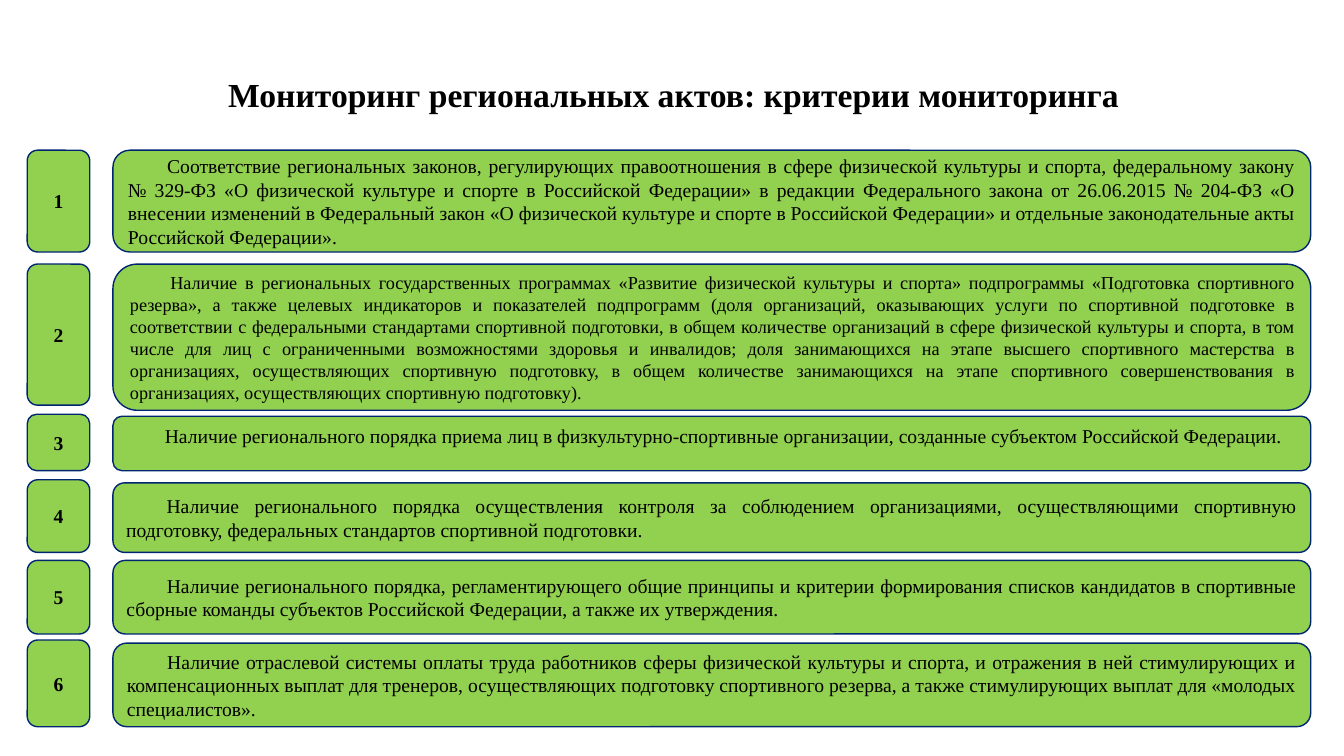
from dataclasses import dataclass

from pptx import Presentation
from pptx.dml.color import RGBColor
from pptx.enum.shapes import MSO_SHAPE
from pptx.enum.text import MSO_ANCHOR, MSO_AUTO_SIZE, PP_ALIGN
from pptx.util import Inches, Pt

COLORS = {"fill": "92D050", "line": "002671", "text": "000000"}
FONT = "Times New Roman"
NUM_X, NUM_W = 0.27, 0.62
TEXT_X, TEXT_W = 1.12, 11.88


@dataclass
class Criterion:
    num_top: float
    num_h: float
    top: float
    height: float
    text: str
    size: int = 14
    indent: float = 0.4
    anchor: MSO_ANCHOR = MSO_ANCHOR.MIDDLE


CRITERIA = [
    Criterion(1.49, 1.01, 1.49, 1.01,
              "Соответствие региональных законов, регулирующих правоотношения в сфере физической "
              "культуры и спорта, федеральному закону № 329-ФЗ «О физической культуре и спорте в "
              "Российской Федерации» в редакции Федерального закона от 26.06.2015 № 204-ФЗ «О "
              "внесении изменений в Федеральный закон «О физической культуре и спорте в Российской "
              "Федерации» и отдельные законодательные акты Российской Федерации».", indent=0.39),
    Criterion(2.62, 1.4, 2.62, 1.45,
              "Наличие в региональных государственных программах «Развитие физической культуры и "
              "спорта» подпрограммы «Подготовка спортивного резерва», а также целевых индикаторов и "
              "показателей подпрограмм (доля организаций, оказывающих услуги по спортивной "
              "подготовке в соответствии с федеральными стандартами спортивной подготовки, в общем "
              "количестве организаций в сфере физической культуры и спорта, в том числе для лиц с "
              "ограниченными возможностями здоровья и инвалидов; доля занимающихся на этапе высшего "
              "спортивного мастерства в организациях, осуществляющих спортивную подготовку, в общем "
              "количестве занимающихся на этапе спортивного совершенствования в организациях, "
              "осуществляющих спортивную подготовку).", size=13),
    Criterion(4.11, 0.56, 4.13, 0.54,
              "Наличие регионального порядка приема лиц в физкультурно-спортивные организации, "
              "созданные субъектом Российской Федерации.", indent=0.39, anchor=MSO_ANCHOR.TOP),
    Criterion(4.76, 0.72, 4.79, 0.69,
              "Наличие регионального порядка осуществления контроля за соблюдением организациями, "
              "осуществляющими спортивную подготовку, федеральных стандартов спортивной подготовки."),
    Criterion(5.56, 0.73, 5.56, 0.73,
              "Наличие регионального порядка, регламентирующего общие принципы и критерии "
              "формирования списков кандидатов в спортивные сборные команды субъектов Российской "
              "Федерации, а также их утверждения."),
    Criterion(6.35, 0.86, 6.38, 0.83,
              "Наличие отраслевой системы оплаты труда работников сферы физической культуры и "
              "спорта, и отражения в ней стимулирующих и компенсационных выплат для тренеров, "
              "осуществляющих подготовку спортивного резерва, а также стимулирующих выплат для "
              "«молодых специалистов»."),
]


def set_attrs(obj, values: dict) -> None:
    """Set every attribute named in values."""
    for name, value in values.items():
        setattr(obj, name, value)


def write(sp, text: str, size: int, bold: bool, align: PP_ALIGN,
          anchor: MSO_ANCHOR = MSO_ANCHOR.MIDDLE, indent: float = 0):
    """Write one formatted paragraph into a shape and return it."""
    tf = sp.text_frame
    set_attrs(tf, {"word_wrap": True, "auto_size": MSO_AUTO_SIZE.NONE, "vertical_anchor": anchor})
    p = tf.paragraphs[0]
    p.alignment = align
    if indent:
        p._p.get_or_add_pPr().set("indent", str(Inches(indent)))
    r = p.add_run()
    r.text = text
    set_attrs(r.font, {"name": FONT, "size": Pt(size), "bold": bold})
    r.font.color.rgb = RGBColor.from_string(COLORS["text"])
    return p


def add_box(s, x: float, y: float, w: float, h: float):
    """Add a green rounded box."""
    sp = s.shapes.add_shape(MSO_SHAPE.ROUNDED_RECTANGLE, Inches(x), Inches(y), Inches(w), Inches(h))
    sp.shadow.inherit = False
    sp.fill.solid()
    sp.fill.fore_color.rgb = RGBColor.from_string(COLORS["fill"])
    sp.line.color.rgb = RGBColor.from_string(COLORS["line"])
    sp.line.width = Pt(1)
    return sp


def add_criterion(s, number: int, c: Criterion) -> None:
    """Add the number box and the text box of a criterion."""
    sp = add_box(s, NUM_X, c.num_top, NUM_W, c.num_h)
    write(sp, str(number), 14, True, PP_ALIGN.CENTER)
    sp = add_box(s, TEXT_X, c.top, TEXT_W, c.height)
    write(sp, c.text, c.size, False, PP_ALIGN.JUSTIFY, c.anchor, c.indent)


def main() -> None:
    """Build the slide and save it."""
    prs = Presentation()
    set_attrs(prs, {"slide_width": Inches(13.33), "slide_height": Inches(7.5)})
    s = prs.slides.add_slide(prs.slide_layouts[5])
    title = s.shapes.title
    set_attrs(title, {"left": Inches(0.68), "top": Inches(0.68),
                      "width": Inches(12), "height": Inches(0.55)})
    p = write(title, "Мониторинг региональных актов: критерии мониторинга", 24, True, PP_ALIGN.CENTER)
    p.line_spacing = 0.9
    for number, criterion in enumerate(CRITERIA, 1):
        add_criterion(s, number, criterion)
    prs.save("out.pptx")


if __name__ == "__main__":
    main()
